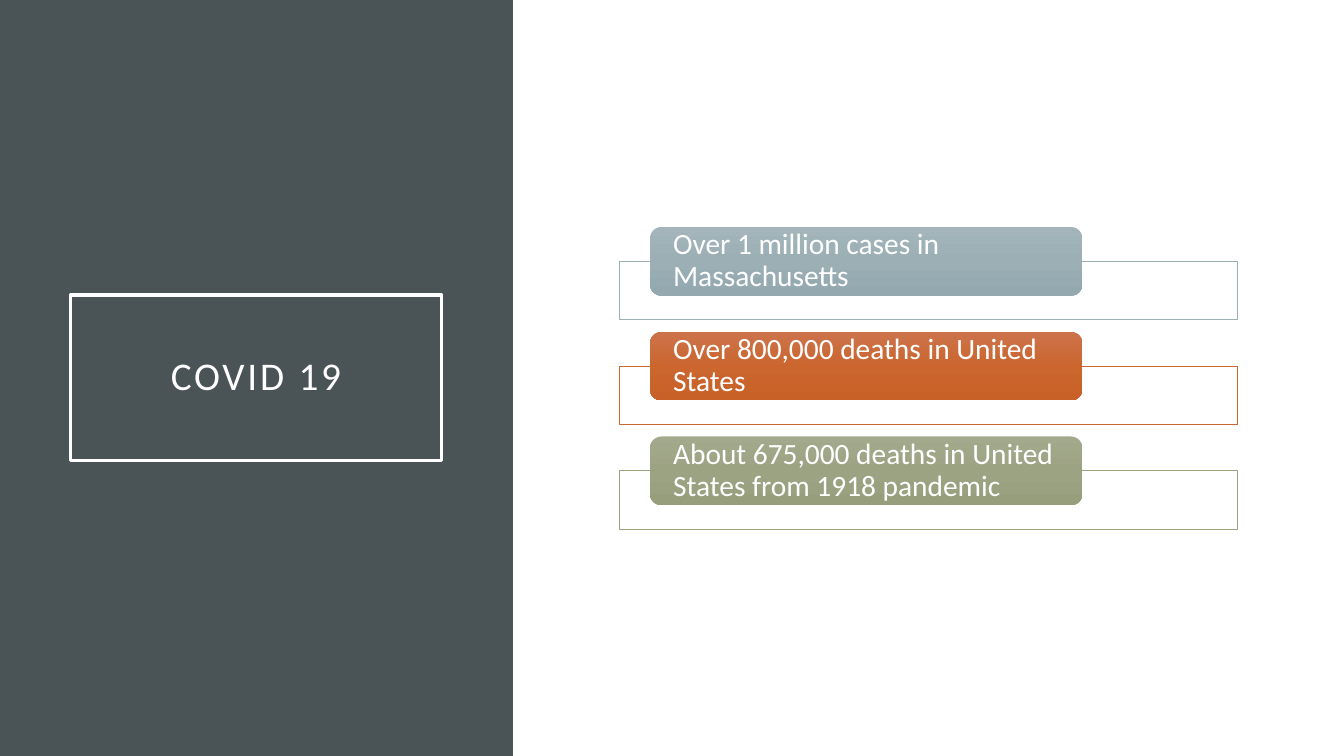
from copy import deepcopy
from dataclasses import dataclass

from lxml.etree import SubElement
from pptx import Presentation
from pptx.dml.color import RGBColor
from pptx.enum.shapes import MSO_SHAPE
from pptx.enum.text import MSO_ANCHOR, PP_ALIGN
from pptx.oxml.ns import qn
from pptx.shapes.autoshape import Shape
from pptx.slide import Slide
from pptx.util import Cm, Pt

COLORS = {"white": "FFFFFF", "panel": "4A5356"}
FONT = "Calibri"
FIRST_PILL_TOP = 5.72
ROW_STEP = 2.64
PILL_HEIGHT = 1.73


@dataclass(frozen=True)
class Fact:
    text: str
    outline: str
    gradient: tuple[str, str, str]


FACTS = [
    Fact("Over 1 million cases in Massachusetts", "9BAFB5", ("A3B5BB", "9BAFB5", "93A9AF")),
    Fact("Over 800,000 deaths in United States", "C96731", ("CC734B", "CB662F", "C86128")),
    Fact("About 675,000 deaths in United States from 1918 pandemic", "9CA383",
         ("A3A98C", "9CA383", "979E7C")),
]


def add_box(slide: Slide, left: float, top: float, width: float, height: float, *,
            kind: MSO_SHAPE = MSO_SHAPE.RECTANGLE, fill: str | None = None,
            line: str | None = None, line_width: float = 0.5) -> Shape:
    """Add a shadowless shape, measured in centimetres."""
    shape = slide.shapes.add_shape(kind, Cm(left), Cm(top), Cm(width), Cm(height))
    shape.shadow.inherit = False
    if fill:
        shape.fill.solid()
        shape.fill.fore_color.rgb = RGBColor.from_string(fill)
    else:
        shape.fill.background()
    if line:
        shape.line.color.rgb = RGBColor.from_string(line)
        shape.line.width = Pt(line_width)
    else:
        shape.line.fill.background()
    return shape


def set_text(shape: Shape, text: str, *, size: float, align: PP_ALIGN,
             inset_x: float, inset_y: float, spacing: float = 0) -> None:
    """Write white text; insets are in centimetres, letter spacing in points."""
    frame = shape.text_frame
    frame.word_wrap = True
    frame.vertical_anchor = MSO_ANCHOR.MIDDLE
    frame.margin_left = frame.margin_right = Cm(inset_x)
    frame.margin_top = frame.margin_bottom = Cm(inset_y)
    paragraph = frame.paragraphs[0]
    paragraph.alignment = align
    paragraph.line_spacing = 0.9
    run = paragraph.add_run()
    run.text = text
    run.font.name = FONT
    run.font.size = Pt(size)
    run.font.color.rgb = RGBColor.from_string(COLORS["white"])
    if spacing:
        run.font._element.set("spc", str(round(spacing * 100)))


def set_opacity(shape: Shape, percent: int) -> None:
    color = shape.element.spPr.find(f"{qn('a:solidFill')}/{qn('a:srgbClr')}")
    SubElement(color, qn("a:alpha"), val=str(percent * 1000))


def set_vertical_gradient(shape: Shape, colors: tuple[str, str, str]) -> None:
    """Fill from top to bottom with evenly spaced colours."""
    shape.fill.gradient()
    shape.fill.gradient_angle = 270
    stop_list = shape.element.spPr.find(f"{qn('a:gradFill')}/{qn('a:gsLst')}")
    stop_list.append(deepcopy(stop_list[-1]))
    for index, (stop, color) in enumerate(zip(shape.fill.gradient_stops, colors)):
        stop.position = index / (len(colors) - 1)
        stop.color.rgb = RGBColor.from_string(color)


def add_fact(slide: Slide, fact: Fact, top: float) -> None:
    frame = add_box(slide, 15.62, top + PILL_HEIGHT / 2, 15.57, 1.47,
                    fill=COLORS["white"], line=fact.outline)
    set_opacity(frame, 90)
    pill = add_box(slide, 16.38, top, 10.9, PILL_HEIGHT, kind=MSO_SHAPE.ROUNDED_RECTANGLE)
    set_vertical_gradient(pill, fact.gradient)
    set_text(pill, fact.text, size=21, align=PP_ALIGN.LEFT, inset_x=0.5, inset_y=0)


def main() -> None:
    presentation = Presentation()
    presentation.slide_width = Cm(33.87)
    presentation.slide_height = Cm(19.05)
    slide = presentation.slides.add_slide(presentation.slide_layouts[6])

    add_box(slide, 0, 0, 12.93, 19.05, fill=COLORS["panel"])
    title = add_box(slide, 1.78, 7.44, 9.35, 4.17, line=COLORS["white"], line_width=2.5)
    set_text(title, "COVID 19", size=28, align=PP_ALIGN.CENTER,
             inset_x=0.5, inset_y=0.5, spacing=2)
    for row, fact in enumerate(FACTS):
        add_fact(slide, fact, FIRST_PILL_TOP + row * ROW_STEP)

    presentation.save("out.pptx")


if __name__ == "__main__":
    main()
